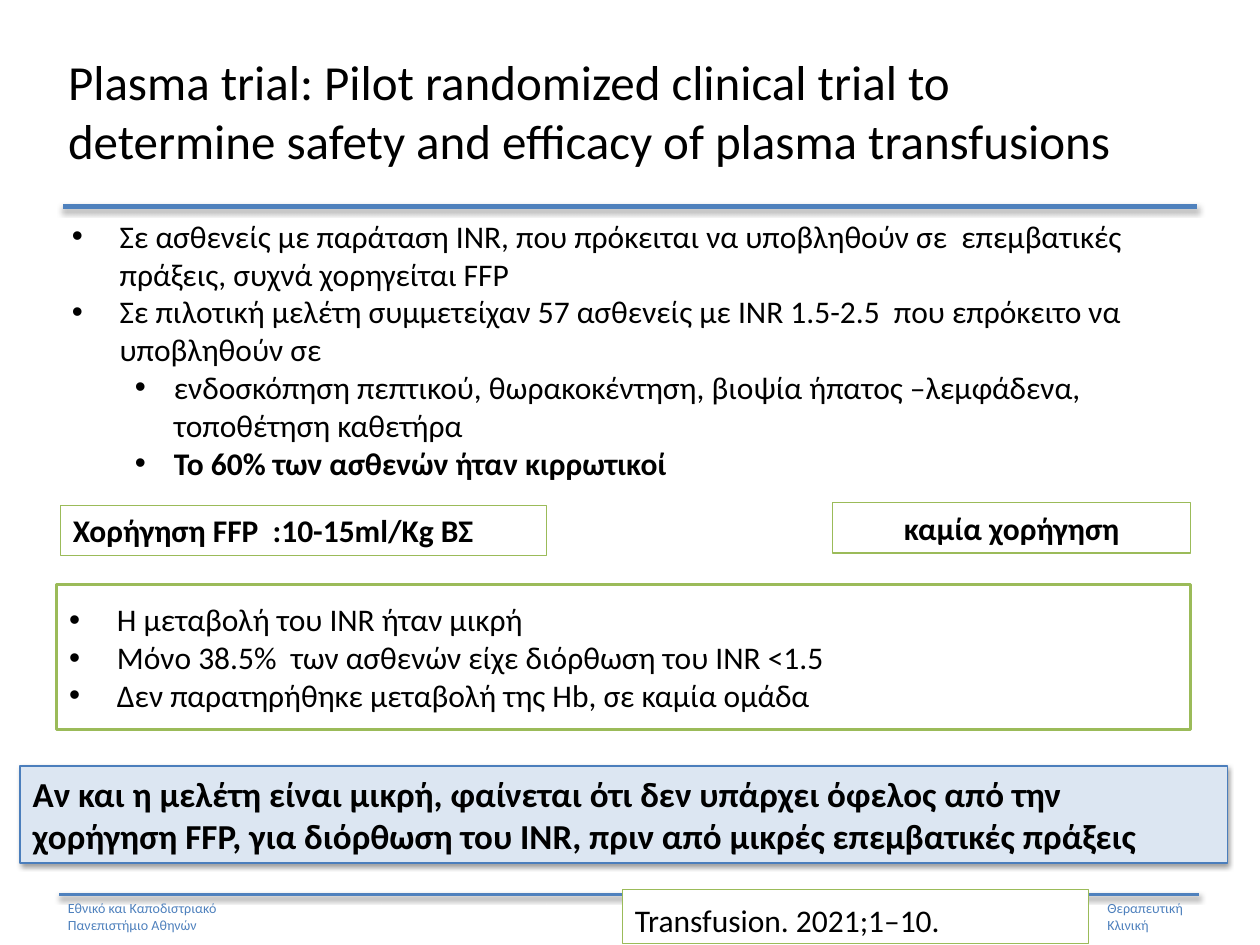
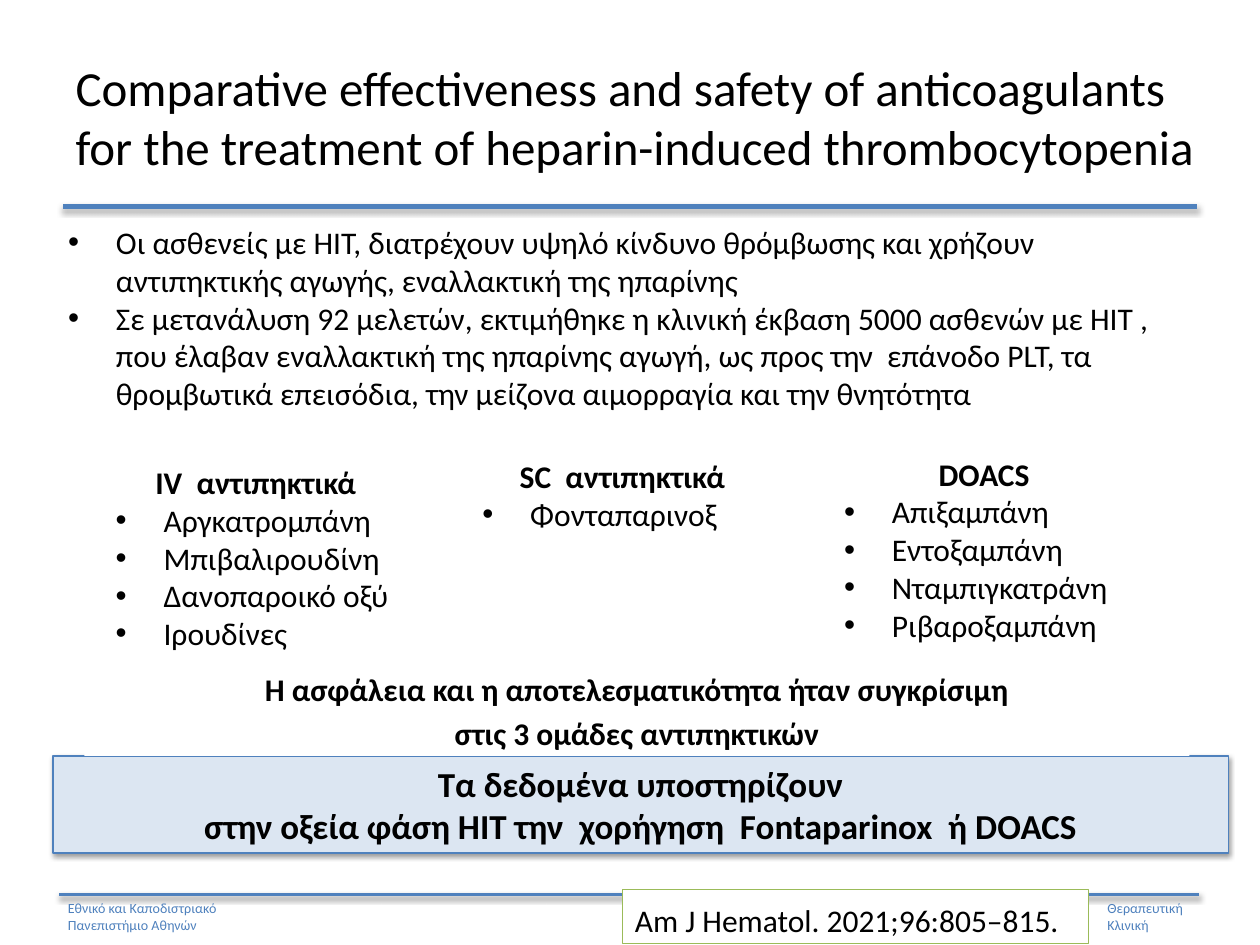
from dataclasses import dataclass

from lxml.etree import SubElement
from pptx import Presentation
from pptx.dml.color import RGBColor
from pptx.enum.shapes import MSO_CONNECTOR, MSO_SHAPE
from pptx.enum.text import MSO_ANCHOR, MSO_AUTO_SIZE, PP_ALIGN
from pptx.oxml.ns import qn
from pptx.util import Inches, Pt

COLOURS = {
    "text": "000000",
    "white": "FFFFFF",
    "blue": "4F81BD",
    "dark_blue": "4B7EBC",
    "pale_blue": "DCE6F2",
    "green": "9BBB59",
}
FONT = "Calibri"
BULLET_INDENTS = [(0.38, 0.38), (0.81, 0.31)]  # text start and hanging, by level


@dataclass
class Line:
    text: str
    bold: bool = False
    bullet: bool = False
    level: int = 0
    align: PP_ALIGN = PP_ALIGN.LEFT
    space_before: float = 0
    line_spacing: float = 1.0


@dataclass
class Box:
    left: float
    top: float
    width: float
    height: float
    lines: list[Line]
    fill: str = "white"
    border: str = ""
    border_width: float = 0.75
    size: float = 18
    anchor: MSO_ANCHOR = MSO_ANCHOR.TOP
    shadow: bool = False


def colour(name: str) -> RGBColor:
    return RGBColor.from_string(COLOURS[name])


def bullets(*texts: str, level: int = 0) -> list[Line]:
    return [Line(text, bullet=True, level=level) for text in texts]


def centred(text: str, space_before: float = 0) -> Line:
    return Line(text, bold=True, align=PP_ALIGN.CENTER, space_before=space_before)


def add_bullet(para, level: int) -> None:
    start, hanging = BULLET_INDENTS[level]
    properties = para._p.get_or_add_pPr()
    properties.set("marL", str(Inches(start)))
    properties.set("indent", str(-Inches(hanging)))
    SubElement(properties, qn("a:buFont"), typeface="Arial")
    SubElement(properties, qn("a:buChar"), char="•")


def write_text(frame, lines: list[Line], size: float = 18, ink: str = "text",
               anchor: MSO_ANCHOR = MSO_ANCHOR.TOP) -> None:
    frame.word_wrap = True
    frame.auto_size = MSO_AUTO_SIZE.NONE
    frame.vertical_anchor = anchor
    for index, line in enumerate(lines):
        para = frame.add_paragraph() if index else frame.paragraphs[0]
        para.text = line.text
        para.level = line.level
        if line.bullet:
            add_bullet(para, line.level)
        para.alignment = line.align
        para.space_before = Pt(line.space_before)
        para.line_spacing = line.line_spacing
        for span in para.runs:
            span.font.name = FONT
            span.font.size = Pt(size)
            span.font.bold = line.bold
            span.font.color.rgb = colour(ink)


def set_effects(shape, shadow: bool) -> None:
    """Replace the theme's effects by a soft downward shadow, or by none."""
    effects = SubElement(shape._element.spPr, qn("a:effectLst"))
    if shadow:
        outer = SubElement(effects, qn("a:outerShdw"), blurRad=str(Pt(3.1)),
                           dist=str(Pt(1.6)), dir="5400000", rotWithShape="0")
        black = SubElement(outer, qn("a:srgbClr"), val=COLOURS["text"])
        SubElement(black, qn("a:alpha"), val="38000")


def draw_box(page, box: Box) -> None:
    shape = page.shapes.add_shape(
        MSO_SHAPE.RECTANGLE, Inches(box.left), Inches(box.top),
        Inches(box.width), Inches(box.height))
    shape.fill.solid()
    shape.fill.fore_color.rgb = colour(box.fill)
    if box.border:
        shape.line.color.rgb = colour(box.border)
        shape.line.width = Pt(box.border_width)
    else:
        shape.line.fill.background()
    set_effects(shape, box.shadow)
    write_text(shape.text_frame, box.lines, size=box.size, anchor=box.anchor)


def draw_rule(page, left: float, right: float, y: float, width: float) -> None:
    rule = page.shapes.add_connector(
        MSO_CONNECTOR.STRAIGHT, Inches(left), Inches(y), Inches(right), Inches(y))
    rule.line.color.rgb = colour("blue")
    rule.line.width = Pt(width)
    set_effects(rule, shadow=True)


def draw_footer_label(page, left: float, width: float, texts: list[str]) -> None:
    label = page.shapes.add_textbox(
        Inches(left), Inches(7.09), Inches(width), Inches(0.37))
    write_text(label.text_frame, [Line(text) for text in texts], size=8, ink="blue")


def fill_placeholder(holder, area: tuple[float, float, float, float],
                     lines: list[Line], **text_format) -> None:
    holder.left, holder.top, holder.width, holder.height = map(Inches, area)
    write_text(holder.text_frame, lines, **text_format)


def add_page(deck, title: str, title_area: tuple[float, float, float, float],
             body: list[Line], body_area: tuple[float, float, float, float],
             citation: str, boxes: list[Box]) -> None:
    page = deck.slides.add_slide(deck.slide_layouts[1])
    fill_placeholder(page.shapes.title, title_area, [Line(title)],
                     size=28, anchor=MSO_ANCHOR.MIDDLE)
    fill_placeholder(page.placeholders[1], body_area, body)
    draw_rule(page, 0.5, 9.5, 1.64, 3)
    draw_rule(page, 0.47, 9.52, 7.1, 1.5)
    draw_footer_label(page, 0.44, 3, ["Εθνικό και Καποδιστριακό", "Πανεπιστήμιο Αθηνών"])
    draw_footer_label(page, 8.69, 1.03, ["Θεραπευτική", "Κλινική"])
    citation_box = Box(4.94, 7.06, 3.7, 0.43, [Line(citation, line_spacing=1.15)],
                       border="green")
    for box in [citation_box, *boxes]:
        draw_box(page, box)


def drug_group(left: float, top: float, heading: str, drugs: list[str],
               anchor: MSO_ANCHOR = MSO_ANCHOR.TOP) -> Box:
    return Box(left, top, 2.42, 1.73, [centred(heading), *bullets(*drugs)], anchor=anchor)


def add_plasma_page(deck) -> None:
    body = [
        *bullets(
            "Σε ασθενείς με παράταση INR, που πρόκειται να υποβληθούν σε  επεμβατικές "
            "πράξεις, συχνά χορηγείται FFP",
            "Σε πιλοτική μελέτη συμμετείχαν 57 ασθενείς με INR 1.5-2.5  που επρόκειτο να "
            "υποβληθούν σε"),
        *bullets("ενδοσκόπηση πεπτικού, θωρακοκέντηση, βιοψία ήπατος –λεμφάδενα, "
                 "τοποθέτηση καθετήρα", level=1),
        Line("Το 60% των ασθενών ήταν κιρρωτικοί", bold=True, bullet=True, level=1),
    ]
    conclusion = Line(
        "Αν και η μελέτη είναι μικρή, φαίνεται ότι δεν υπάρχει όφελος από την χορήγηση "
        "FFP, για διόρθωση του INR, πριν από μικρές επεμβατικές πράξεις", bold=True)
    results = bullets(
        "Η μεταβολή του INR ήταν μικρή",
        "Μόνο 38.5%  των ασθενών είχε διόρθωση του INR <1.5",
        "Δεν παρατηρήθηκε μεταβολή της Hb, σε καμία ομάδα")
    add_page(
        deck,
        "Plasma trial: Pilot randomized clinical trial to\v"
        "determine safety and efficacy of plasma transfusions",
        (0.44, 0.25, 9, 1.25), body, (0.47, 1.67, 9.2, 2.08),
        "Transfusion. 2021;1–10.",
        [
            Box(0.16, 6.08, 9.58, 0.77, [conclusion], fill="pale_blue",
                border="dark_blue", size=20, shadow=True),
            Box(0.48, 4.01, 3.86, 0.4, [Line("Χορήγηση FFP  :10-15ml/Kg ΒΣ", bold=True)],
                border="green"),
            Box(6.61, 3.99, 2.84, 0.4, [centred("καμία χορήγηση")], border="green"),
            Box(0.45, 4.64, 9, 1.15, results, border="green", border_width=2,
                anchor=MSO_ANCHOR.MIDDLE),
        ])


def add_anticoagulants_page(deck) -> None:
    body = bullets(
        "Οι ασθενείς με HIT, διατρέχουν υψηλό κίνδυνο θρόμβωσης και χρήζουν "
        "αντιπηκτικής αγωγής, εναλλακτική της ηπαρίνης",
        "Σε μετανάλυση 92 μελετών, εκτιμήθηκε η κλινική έκβαση 5000 ασθενών με HIT , "
        "που έλαβαν εναλλακτική της ηπαρίνης αγωγή, ως προς την  επάνοδο PLT, τα "
        "θρομβωτικά επεισόδια, την μείζονα αιμορραγία και την θνητότητα")
    conclusion = [
        centred("Τα δεδομένα υποστηρίζουν"),
        centred("στην οξεία φάση HIT την  χορήγηση  Fontaparinox  ή DOACS"),
    ]
    comparison = [
        centred("Η ασφάλεια και η αποτελεσματικότητα ήταν συγκρίσιμη"),
        centred("στις 3 ομάδες αντιπηκτικών", space_before=3.6),
    ]
    add_page(
        deck,
        "Comparative effectiveness and safety of anticoagulants "
        "for the treatment of heparin-induced thrombocytopenia",
        (0.5, 0.3, 9.25, 1.25), body, (0.44, 1.72, 9, 1.83),
        "Am J Hematol. 2021;96:805–815.",
        [
            Box(0.42, 6, 9.33, 0.77, conclusion, fill="pale_blue", border="blue",
                size=20, shadow=True),
            Box(0.67, 5.29, 8.77, 0.71, comparison, anchor=MSO_ANCHOR.MIDDLE),
            drug_group(0.82, 3.56, "IV  αντιπηκτικά",
                       ["Αργκατρομπάνη", "Μπιβαλιρουδίνη", "Δανοπαροικό οξύ", "Ιρουδίνες"],
                       anchor=MSO_ANCHOR.MIDDLE),
            drug_group(3.73, 3.58, "SC  αντιπηκτικά", ["Φονταπαρινοξ"]),
            drug_group(6.6, 3.56, "DOACS",
                       ["Απιξαμπάνη", "Εντοξαμπάνη", "Νταμπιγκατράνη", "Ριβαροξαμπάνη"]),
        ])


def main() -> None:
    deck = Presentation()
    deck.slide_width, deck.slide_height = Inches(10), Inches(7.5)
    add_plasma_page(deck)
    add_anticoagulants_page(deck)
    deck.save("out.pptx")


if __name__ == "__main__":
    main()
